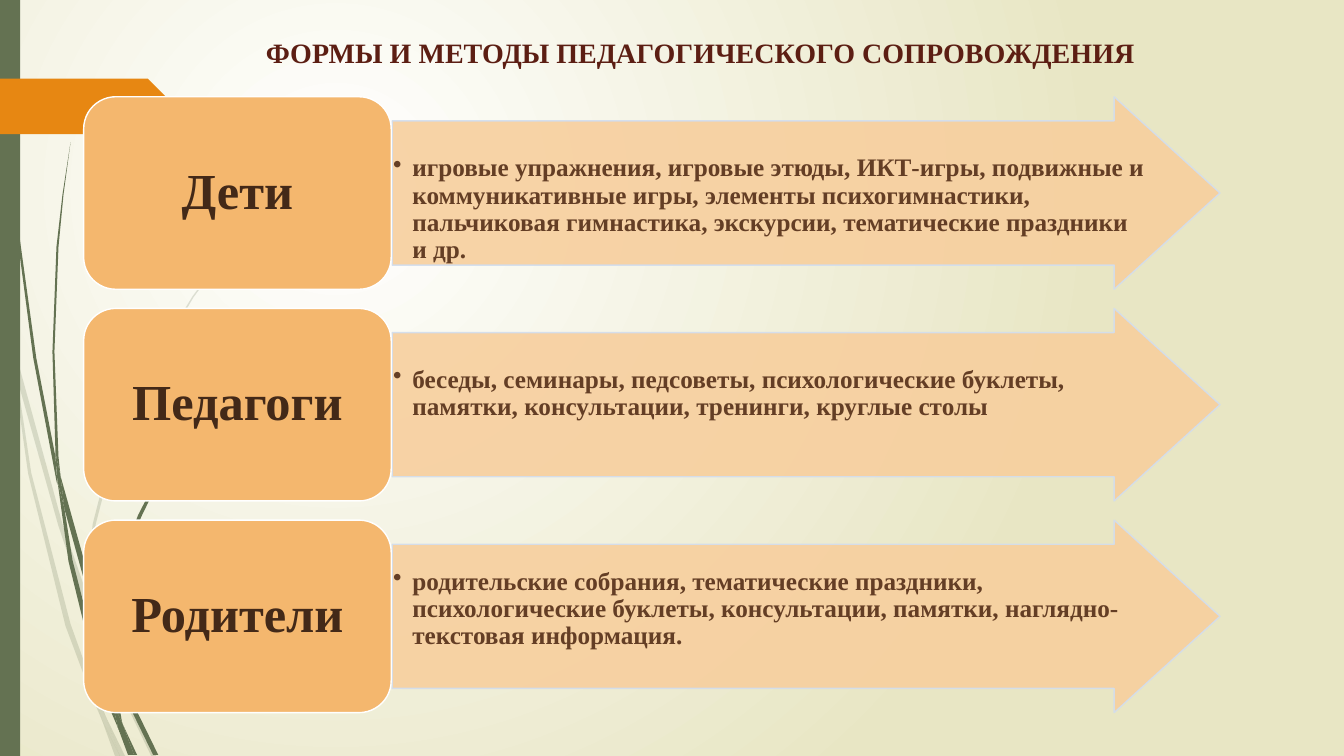
from dataclasses import dataclass

from lxml.etree import SubElement
from pptx import Presentation
from pptx.dml.color import RGBColor as Rgb
from pptx.enum.shapes import MSO_SHAPE as Shape
from pptx.enum.text import MSO_ANCHOR as Anchor, PP_ALIGN as Align
from pptx.oxml.ns import qn
from pptx.util import Inches, Pt


@dataclass(frozen=True)
class Theme:
    font: str = "Times New Roman"
    glow: str = "FFFFFF"
    backdrop: str = "E8E6C4"
    foliage: str = "647252"
    tag: str = "E78712"
    title: str = "5C1E13"
    tile: str = "F4B76E"
    tile_line: str = "FFFFFF"
    tile_text: str = "432918"
    arrow: str = "F7CF9E"
    arrow_line: str = "D2DEEF"
    arrow_text: str = "643E25"
    title_size: int = 20
    tile_size: int = 36
    arrow_size: int = 18


ROW_TOP, ROW_PITCH, ROW_HEIGHT = 0.96, 2.1, 1.91
TILE_LEFT, TILE_WIDTH = 0.83, 3.05
ARROW_LEFT, ARROW_NECK, ARROW_TIP, ARROW_EDGE = 3.89, 11.05, 12.1, 0.24

TITLE = "ФОРМЫ И МЕТОДЫ ПЕДАГОГИЧЕСКОГО СОПРОВОЖДЕНИЯ"
AUDIENCES = [
    ("Дети", "игровые упражнения, игровые этюды, ИКТ-игры, подвижные и коммуникативные игры, "
             "элементы психогимнастики, пальчиковая гимнастика, экскурсии, тематические праздники и др.", 0.58),
    ("Педагоги", "беседы, семинары, педсоветы, психологические буклеты, памятки, консультации, "
                 "тренинги, круглые столы", 0.58),
    ("Родители", "родительские собрания, тематические праздники, психологические буклеты, "
                 "консультации, памятки, наглядно-текстовая информация.", 0.48),
]

PALE_STEMS = [
    [(0.11, 3.5), (0.09, 3.22), (0, 2.82), (0, 2.99), (0.1, 3.44)],
    [(0.58, 5.22), (0.84, 5.99), (0.85, 5.86), (0.62, 5.2), (0.14, 3.45), (0.17, 3.76)],
    [(0.92, 6.07), (0.88, 5.96), (0.88, 6.1), (1.23, 6.94), (1.5, 7.5), (1.55, 7.5), (1.27, 6.92)],
    [(1.19, 7.5), (1.24, 7.5), (1.05, 7.11)],
    [(0.93, 6.83), (0.7, 6.19), (0.31, 4.69), (0.17, 3.76), (0.11, 3.5), (0.28, 4.7),
     (0.65, 6.21), (0.92, 6.93), (1.01, 7.14), (0.99, 7.07)],
    [(0.84, 5.99), (0.87, 6.46), (0.93, 6.83), (0.96, 6.92), (1.05, 7.11), (1.03, 7.06),
     (0.91, 6.46), (0.88, 6.1), (0.88, 6.08)],
    [(0.88, 5.84), (0.95, 5.2), (1.1, 4.62), (1.33, 4.04), (1.6, 3.49), (1.92, 2.95), (2.29, 2.45),
     (2.68, 1.98), (2.9, 1.75), (3.12, 1.54), (3.12, 1.53), (2.89, 1.75), (2.68, 1.97), (2.28, 2.44),
     (1.91, 2.94), (1.58, 3.48), (1.3, 4.03), (1.07, 4.61), (0.92, 5.2), (0.85, 5.84), (0.88, 5.96)],
    [(1.01, 7.14), (1.14, 7.5), (1.19, 7.5)],
    [(0.88, 6.08), (0.88, 5.96), (0.85, 5.86), (0.84, 5.99)],
    [(0.96, 6.92), (0.93, 6.83), (0.99, 7.07), (1.01, 7.14), (1.19, 7.5), (1.05, 7.11)],
]
DARK_STEMS = [
    [(0.07, 1.1), (0.17, 2.33), (0.33, 3.55), (0.56, 4.77), (0.57, 4.81), (0.55, 4.53),
     (0.36, 3.55), (0.19, 2.32), (0.08, 1.09), (0.05, 0.48), (0.04, 0), (0.03, 0), (0.04, 0.48)],
    [(0.88, 5.92), (1.06, 6.45), (1.06, 6.31), (0.93, 5.9), (0.6, 4.72), (0.64, 5.05)],
    [(1.13, 6.49), (1.1, 6.41), (1.11, 6.56), (1.32, 7.08), (1.52, 7.49), (1.57, 7.49), (1.36, 7.06)],
    [(1.1, 6.91), (0.98, 6.57), (0.72, 5.56), (0.64, 5.05), (0.57, 4.77), (0.68, 5.57),
     (0.93, 6.59), (1.11, 7.08), (1.17, 7.22), (1.16, 7.17)],
    [(0.6, 4.72), (0.58, 4.53), (0.54, 3.49), (0.58, 2.45), (0.63, 1.93), (0.7, 1.41),
     (0.62, 1.93), (0.56, 2.45), (0.52, 3.49), (0.55, 4.49)],
    [(1.33, 7.49), (1.36, 7.49), (1.22, 7.19)],
    [(0.57, 4.77), (0.64, 5.05), (0.6, 4.72), (0.55, 4.49), (0.55, 4.53)],
    [(1.11, 6.33), (1.15, 5.92), (1.25, 5.52), (1.4, 5.13), (1.58, 4.76), (1.81, 4.4), (2.05, 4.06),
     (2.31, 3.74), (2.45, 3.59), (2.61, 3.44), (2.45, 3.58), (2.31, 3.73), (2.04, 4.05), (1.79, 4.38),
     (1.56, 4.74), (1.37, 5.11), (1.22, 5.51), (1.11, 5.91), (1.06, 6.31), (1.1, 6.41)],
    [(1.17, 7.22), (1.27, 7.49), (1.31, 7.49)],
    [(1.06, 6.45), (1.1, 6.91), (1.16, 7.06), (1.22, 7.19), (1.21, 7.16), (1.11, 6.56), (1.09, 6.51)],
    [(1.06, 6.45), (1.11, 6.56), (1.1, 6.41), (1.06, 6.31)],
    [(1.16, 7.06), (1.1, 6.91), (1.16, 7.17), (1.17, 7.22), (1.3, 7.49), (1.33, 7.49), (1.22, 7.19)],
]


class SlideBuilder:
    def __init__(self, slide, theme):
        self.slide, self.theme = slide, theme

    def background(self):
        fill = self.slide.background.fill
        fill.gradient()
        for stop, color in zip(fill.gradient_stops, (self.theme.glow, self.theme.backdrop)):
            stop.color.rgb = Rgb.from_string(color)
        gradient = next(self.slide.element.iter(qn("a:gradFill")))
        gradient.remove(gradient.find(qn("a:lin")))
        radial = SubElement(gradient, qn("a:path"), {"path": "circle"})
        SubElement(radial, qn("a:fillToRect"), l="50000", t="50000", r="100000", b="100000")

    def paint(self, shape, fill, line=None, opacity=100):
        shape.shadow.inherit = False
        shape.fill.solid()
        shape.fill.fore_color.rgb = Rgb.from_string(fill)
        if line:
            shape.line.color.rgb = Rgb.from_string(line)
            shape.line.width = Pt(1)
        else:
            shape.line.fill.background()
        if opacity < 100:
            for color in shape.element.spPr.iter(qn("a:srgbClr")):
                SubElement(color, qn("a:alpha"), val=str(opacity * 1000))
        return shape

    def preset(self, kind, box, fill, line=None):
        shape = self.slide.shapes.add_shape(kind, *map(Inches, box))
        return self.paint(shape, fill, line)

    def outline(self, points, fill, line=None, opacity=100):
        start, *rest = [(Inches(x), Inches(y)) for x, y in points]
        builder = self.slide.shapes.build_freeform(*start)
        builder.add_line_segments(rest, close=True)
        return self.paint(builder.convert_to_shape(), fill, line, opacity)

    def label(self, shape, text, size, color, align=Align.CENTER, anchor=Anchor.MIDDLE,
              margins=(0.1, 0.05, 0.1, 0.05), spacing=None, bullet=False):
        frame = shape.text_frame
        frame.word_wrap = True
        frame.vertical_anchor = anchor
        (frame.margin_left, frame.margin_top,
         frame.margin_right, frame.margin_bottom) = map(Inches, margins)
        paragraph = frame.paragraphs[0]
        paragraph.text = text
        paragraph.alignment = align
        paragraph.line_spacing = spacing
        if bullet:
            properties = paragraph._p.get_or_add_pPr()
            properties.set("marL", str(Inches(0.19)))
            properties.set("indent", str(-Inches(0.19)))
            SubElement(properties, qn("a:buChar"), char="•")
        font = paragraph.font
        font.name, font.size, font.bold = self.theme.font, Pt(size), True
        font.color.rgb = Rgb.from_string(color)

    def title(self, text):
        box = self.slide.shapes.add_textbox(*map(Inches, (1.31, 0.3, 11.27, 1.12)))
        self.label(box, text, self.theme.title_size, self.theme.title, anchor=Anchor.TOP)

    def arrow(self, top, methods, text_inset):
        bottom = top + ROW_HEIGHT
        upper, lower = top + ARROW_EDGE, bottom - ARROW_EDGE
        points = [(ARROW_LEFT, upper), (ARROW_NECK, upper), (ARROW_NECK, top),
                  (ARROW_TIP, top + ROW_HEIGHT / 2), (ARROW_NECK, bottom),
                  (ARROW_NECK, lower), (ARROW_LEFT, lower)]
        arrow = self.outline(points, self.theme.arrow, self.theme.arrow_line, 90)
        self.label(arrow, methods, self.theme.arrow_size, self.theme.arrow_text, Align.LEFT,
                   Anchor.TOP, (0.01, text_inset, 0.73, 0), 0.9, bullet=True)

    def tile(self, top, audience):
        tile = self.preset(Shape.ROUNDED_RECTANGLE, (TILE_LEFT, top, TILE_WIDTH, ROW_HEIGHT),
                           self.theme.tile, self.theme.tile_line)
        self.label(tile, audience, self.theme.tile_size, self.theme.tile_text,
                   margins=(0.24, 0.17, 0.24, 0.17), spacing=0.9)


def main():
    deck = Presentation()
    deck.slide_width, deck.slide_height = Inches(13.33), Inches(7.5)
    theme = Theme()
    page = SlideBuilder(deck.slides.add_slide(deck.slide_layouts[6]), theme)
    page.background()
    for stems, opacity in ((PALE_STEMS, 20), (DARK_STEMS, 100)):
        for stem in stems:
            page.outline(stem, theme.foliage, opacity=opacity)
    page.preset(Shape.RECTANGLE, (0, 0, 0.2, 7.5), theme.foliage)
    page.preset(Shape.PENTAGON, (0, 0.78, 1.74, 0.55), theme.tag)
    page.title(TITLE)
    for row, (audience, methods, text_inset) in enumerate(AUDIENCES):
        top = ROW_TOP + row * ROW_PITCH
        page.arrow(top, methods, text_inset)
        page.tile(top, audience)
    deck.save("out.pptx")


if __name__ == "__main__":
    main()
